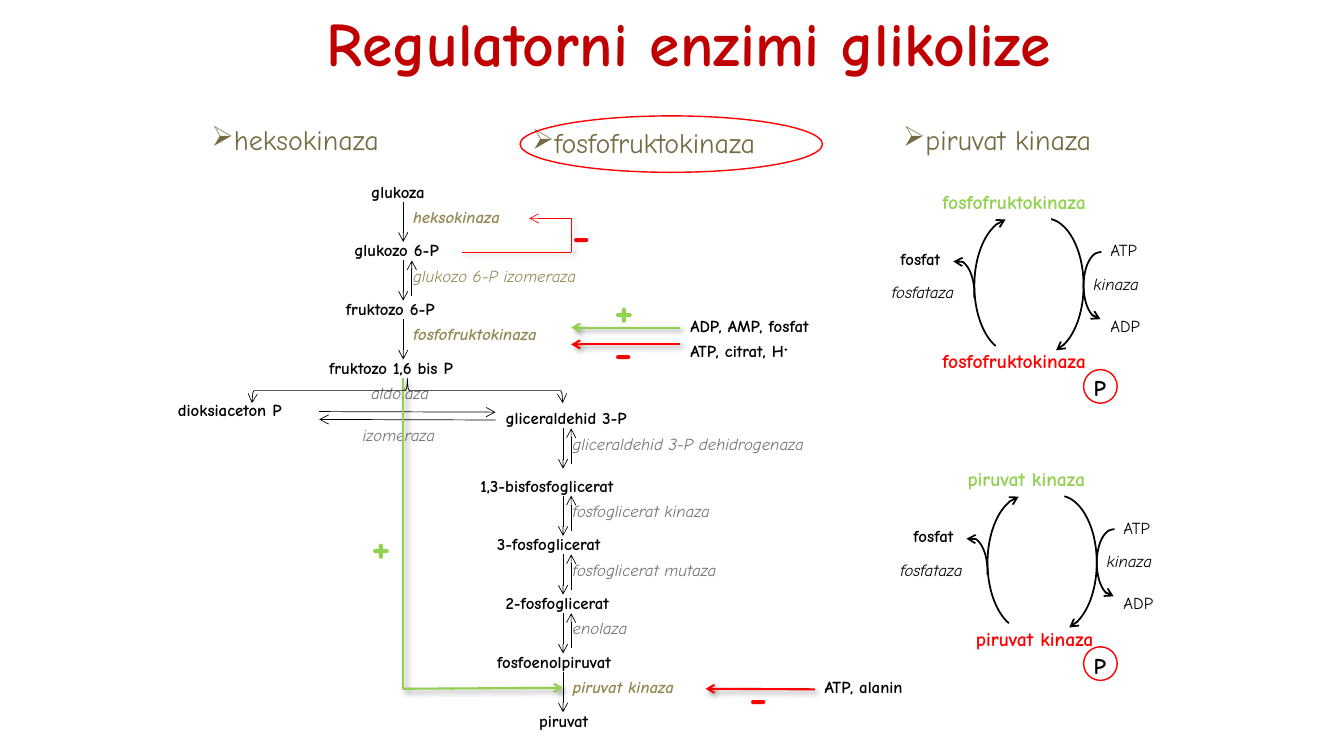
from dataclasses import dataclass

from lxml import etree
from pptx import Presentation
from pptx.dml.color import RGBColor
from pptx.enum.shapes import MSO_CONNECTOR, MSO_SHAPE
from pptx.enum.text import MSO_ANCHOR, MSO_AUTO_SIZE, PP_ALIGN
from pptx.oxml.ns import qn
from pptx.util import Pt

ARC, OVAL, BRACE = MSO_SHAPE.ARC, MSO_SHAPE.OVAL, MSO_SHAPE.RIGHT_BRACE
STRAIGHT = MSO_CONNECTOR.STRAIGHT
TOP, CENTER, LEFT = MSO_ANCHOR.TOP, PP_ALIGN.CENTER, PP_ALIGN.LEFT
FIT, NO_FIT = MSO_AUTO_SIZE.SHAPE_TO_FIT_TEXT, MSO_AUTO_SIZE.NONE
FONT = "Comic Neue"
COLORS = {"title": "C00000", "heading": "736B41", "key": "948A54", "enzyme": "767171",
          "black": "000000", "red": "FF0000", "green": "92D050"}


@dataclass
class Label:
    text: str
    x: float
    y: float
    w: float
    color: str = "black"
    size: float = 12
    bold: bool = False
    italic: bool = False
    bullet: str = ""
    superscript: str = ""


@dataclass
class Line:
    x1: float
    y1: float
    x2: float
    y2: float
    color: str = "black"
    weight: float = 0.5
    head: bool = False
    tail: bool = False
    shadow: bool = False


@dataclass
class Arc:
    x: float
    y: float
    w: float
    h: float
    start: float
    end: float
    head: bool = False


@dataclass
class Cycle:
    enzyme: str
    w: float
    active_x: float
    phospho_x: float
    phosphatase_x: float
    dx: float
    dy: float


def rgb(name: str) -> RGBColor:
    return RGBColor.from_string(COLORS[name])


def add_label(slide, label: Label):
    sp = slide.shapes.add_textbox(Pt(label.x), Pt(label.y), Pt(label.w),
                                  Pt(label.size * 1.21 + 7.2))
    tf = sp.text_frame
    tf.word_wrap, tf.auto_size, tf.vertical_anchor = False, FIT, TOP
    p = tf.paragraphs[0]
    p.alignment = LEFT
    p.add_run().text = label.text
    if label.superscript:
        r = p.add_run()
        r.text = label.superscript
        r.font._element.set("baseline", "30000")
    if label.bullet:
        etree.SubElement(p._p.get_or_add_pPr(), qn("a:buChar")).set("char", label.bullet)
    f = p.font
    f.name, f.size, f.bold, f.italic = FONT, Pt(label.size), label.bold, label.italic
    f.color.rgb = rgb(label.color)
    return sp


def add_arrowheads(sp, head: bool, tail: bool) -> None:
    ln = sp.line._get_or_add_ln()
    for tag, wanted in (("a:headEnd", head), ("a:tailEnd", tail)):
        if wanted:
            etree.SubElement(ln, qn(tag)).set("type", "arrow")


def add_line(slide, line: Line) -> None:
    sp = slide.shapes.add_connector(STRAIGHT, Pt(line.x1), Pt(line.y1), Pt(line.x2), Pt(line.y2))
    sp.line.color.rgb = rgb(line.color)
    sp.line.width = Pt(line.weight)
    add_arrowheads(sp, line.head, line.tail)
    effects = etree.SubElement(sp._element.spPr, qn("a:effectLst"))
    if line.shadow:
        shadow = etree.SubElement(effects, qn("a:outerShdw"), blurRad=str(Pt(4)),
                                  dist=str(Pt(3)), dir="2700000", rotWithShape="0")
        color = etree.SubElement(shadow, qn("a:srgbClr"), val=COLORS["black"])
        etree.SubElement(color, qn("a:alpha"), val="40000")


def add_outline(slide, kind, x: float, y: float, w: float, h: float, color: str, weight: float):
    sp = slide.shapes.add_shape(kind, Pt(x), Pt(y), Pt(w), Pt(h))
    sp.shadow.inherit = False
    sp.fill.background()
    sp.line.color.rgb = rgb(color)
    sp.line.width = Pt(weight)
    return sp


def add_cycle(slide, c: Cycle) -> None:
    for a in CYCLE_ARCS:
        sp = add_outline(slide, ARC, a.x + c.dx, a.y + c.dy, a.w, a.h, "black", 1.25)
        sp.adjustments[0], sp.adjustments[1] = a.start, a.end
        add_arrowheads(sp, a.head, not a.head)
    add_outline(slide, OVAL, 774, 264 + c.dy, 24, 24, "red", 1)
    for label in (
        Label(c.enzyme, c.active_x, 132 + c.dy, c.w, "green", 14, bold=True),
        Label(c.enzyme, c.phospho_x, 246 + c.dy, c.w, "red", 14, bold=True),
        Label("P", 774, 264 + c.dy, 23, size=16, bold=True),
        Label("fosfat", 636 + c.dx, 174 + c.dy, 52, bold=True),
        Label("fosfataza", c.phosphatase_x, 198 + c.dy, 70, italic=True),
        Label("ATP", 786 + c.dx, 168 + c.dy, 38),
        Label("ADP", 786 + c.dx, 222 + c.dy, 38),
        Label("kinaza", 774 + c.dx, 192 + c.dy, 50, italic=True),
    ):
        add_label(slide, label)


# Headings
HEADINGS = [Label(t, x, y, w, "heading", 20, bullet="➢") for t, x, y, w in (
    ("heksokinaza", 144, 84, 143), ("fosfofruktokinaza", 373, 86.4, 202),
    ("piruvat kinaza", 638, 84, 162))]

# Pathway
METABOLITES = [Label(t, x, y, w, bold=True) for t, x, y, w in (
    ("glukoza", 258, 126, 57), ("glukozo 6-P", 246, 168, 83), ("fruktozo 6-P", 240, 210, 91),
    ("fruktozo 1,6 bis P", 228, 252, 123), ("gliceraldehid 3-P", 354, 288, 114.5),
    ("dioksiaceton P", 120, 282, 97), ("1,3-bisfosfoglicerat", 336, 336, 134),
    ("3-fosfoglicerat", 348, 378, 104.5), ("2-fosfoglicerat", 354, 420, 104.5),
    ("fosfoenolpiruvat", 348, 462, 109), ("piruvat", 378, 504, 55))]
KEY_ENZYMES = [Label(t, x, y, w, "key", bold=bold, italic=True) for t, x, y, w, bold in (
    ("heksokinaza", 288, 144, 83.5, True), ("glukozo 6-P izomeraza", 288, 186, 140, False),
    ("fosfofruktokinaza", 288, 228, 119, True), ("piruvat kinaza", 402, 480, 96.5, True))]
ENZYMES = [Label(t, x, y, w, "enzyme", italic=True) for t, x, y, w in (
    ("aldolaza", 258, 270, 61), ("izomeraza", 252, 300, 73),
    ("gliceraldehid 3-P dehidrogenaza", 402, 306, 194), ("fosfoglicerat kinaza", 402, 354, 131),
    ("fosfoglicerat mutaza", 402, 396, 137), ("enolaza", 402, 438, 58))]
FORWARD = [Line(x, y, x, y + 28.8, tail=True) for x, y in (
    (288, 144), (288, 186), (288, 228),
    (402.2, 306), (402.2, 354), (402.2, 396), (402.2, 438), (402.2, 480))]
REVERSE = [Line(x, y, x, y + 25.2, head=True) for x, y in (
    (294.2, 186), (408, 306), (408, 354), (408, 396), (408, 438))]
ISOMERASE = [Line(228, 294, 354, 294.4, tail=True), Line(354, 300, 228, 299.6, tail=True)]

# Regulation
EFFECTORS = [Label("ADP, AMP, fosfat", 486, 222, 124, bold=True),
             Label("ATP, citrat, H", 486, 240, 109.5, bold=True, superscript="+"),
             Label("ATP, alanin", 582, 480, 81, bold=True)]
SIGNS = [Label(t, x, y, 34.6, color, 32, bold=True) for t, x, y, color in (
    ("-", 402, 144, "red"), ("+", 432, 198, "green"), ("-", 432, 228, "red"),
    ("+", 258, 366, "green"), ("-", 528, 474, "red"))]
REGULATION = [
    Line(330, 180, 408, 180, "red", shadow=True),
    Line(408, 180, 408, 156, "red", shadow=True),
    Line(408, 156, 378, 156, "red", tail=True),
    Line(408, 234, 486, 234, "green", 1.5, head=True, shadow=True),
    Line(408, 246, 486, 246, "red", 1.5, head=True, shadow=True),
    Line(288, 270, 288, 492, "green", 1.5, shadow=True),
    Line(288, 492, 402, 491.3, "green", 1.5, tail=True, shadow=True),
    Line(504, 492, 582, 492.4, "red", 1.5, head=True, shadow=True)]

# Phosphorylation cycles
CYCLE_ARCS = [Arc(720, 156, 54, 96, 164.8, 48.58), Arc(696, 156, 54, 96, 63.16, 158.6),
              Arc(672, 186, 24, 48, 157.5, 7.54, head=True),
              Arc(774, 180, 24, 48, 53.86, 163, head=True)]
CYCLES = [Cycle("fosfofruktokinaza", 135, 666, 666, 630, 0, 0),
          Cycle("piruvat kinaza", 110, 684, 690, 636, 9.4, 198)]


def main() -> None:
    prs = Presentation()
    prs.slide_width, prs.slide_height = Pt(960), Pt(540)
    slide = prs.slides.add_slide(prs.slide_layouts[6])

    # Title
    sp = add_label(slide, Label("Regulatorni enzimi glikolize", 186, 0, 612, "title", 44, bold=True))
    sp.text_frame.word_wrap, sp.text_frame.auto_size = True, NO_FIT
    sp.text_frame.paragraphs[0].alignment = CENTER

    # Pathway with its regulation
    for label in HEADINGS + METABOLITES + KEY_ENZYMES + ENZYMES + EFFECTORS + SIGNS:
        add_label(slide, label)
    for line in FORWARD + REVERSE + ISOMERASE + REGULATION:
        add_line(slide, line)

    # Aldolase split, and the ring around the main enzyme
    brace = add_outline(slide, BRACE, 282, 168, 18, 222, "black", 0.5)
    brace.rotation = 270
    add_arrowheads(brace, True, True)
    add_outline(slide, OVAL, 371.5, 82.8, 216, 40.3, "red", 1)

    for cycle in CYCLES:
        add_cycle(slide, cycle)
    prs.save("out.pptx")


if __name__ == "__main__":
    main()
